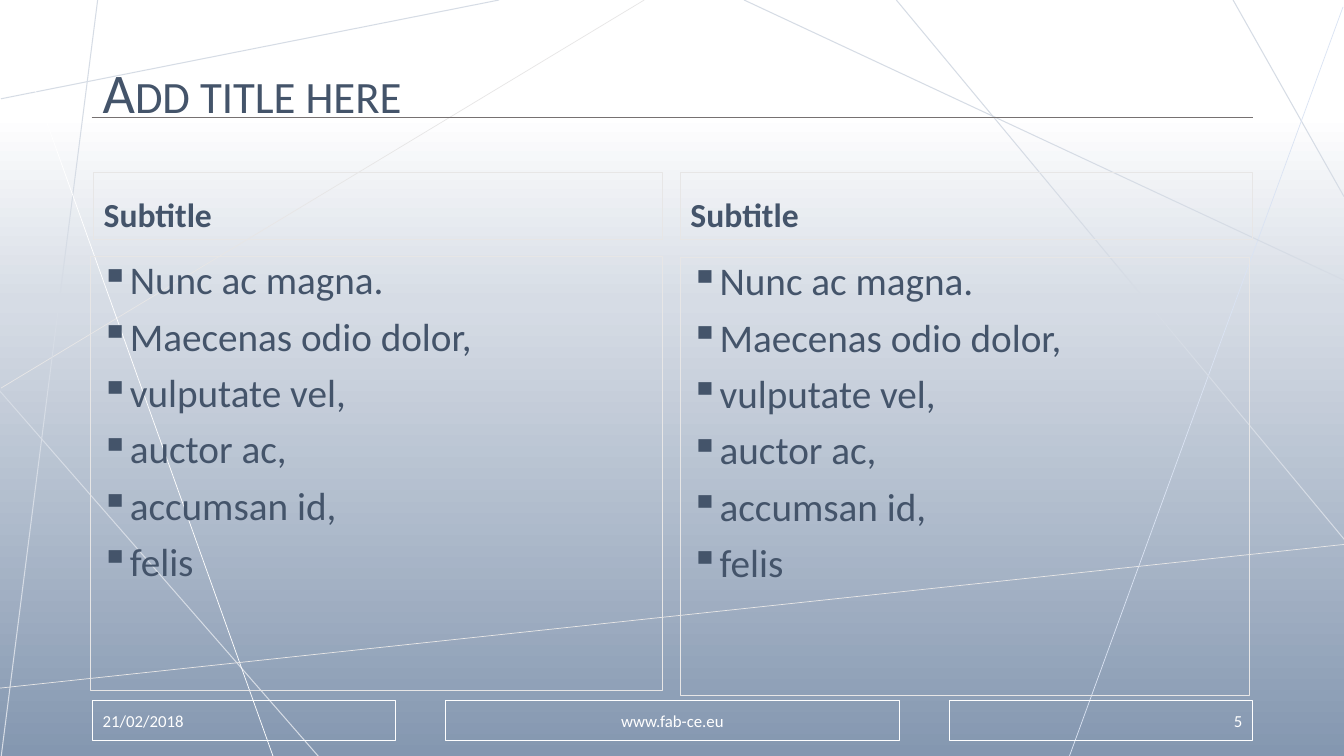
from lxml import etree
from pptx import Presentation
from pptx.dml.color import RGBColor
from pptx.enum.shapes import MSO_CONNECTOR
from pptx.enum.text import MSO_ANCHOR as Anchor, PP_ALIGN as Align
from pptx.oxml.ns import qn
from pptx.util import Inches, Pt

WIDTH, HEIGHT = 13.33, 7.5
FONT = "Calibri"
COLOURS = {"ink": "44546A", "white": "FFFFFF", "mist": "D6DCE5", "steel": "8497B0",
           "pale": "E7E6E6", "ice": "DAE3F3", "rule": "767171"}
BACKGROUND = [(15, "white"), (40, "mist"), (100, "steel")]

# start, end, colour, width in points
LINES = [
    ((0.01, 0.98), (4.95, 0), "mist", 0.75),
    ((13.33, 1.95), (12.23, 0), "mist", 0.75),
    ((0.01, 3.85), (6.39, 0), "pale", 0.5),
    ((3.19, 7.54), (-0.01, 3.87), "mist", 0.75),
    ((13.32, 0.07), (10.6, 7.52), "ice", 0.5),
    ((8.89, 0), (13.34, 5.36), "mist", 0.75),
    ((7.38, 0), (13.33, 2.78), "mist", 0.75),
    ((0.01, 7.52), (0.98, -0.09), "mist", 0.75),
    ((2.75, 7.62), (0.02, -0.03), "white", 0.5),
    ((-1.34, 6.97), (13.34, 5.4), "pale", 0.5),
    ((0.91, 1.17), (12.43, 1.17), "rule", 0.75),
]

TITLE = "Add title here"
SUBTITLE = "Subtitle"
ITEMS = ["Nunc ac magna.", "Maecenas odio dolor,", "vulputate vel,",
         "auctor ac,", "accumsan id,", "felis"]
# subtitle box, list box
COLUMNS = [((0.93, 1.71, 5.64, 0.67), (0.9, 2.54, 5.67, 4.31)),
           ((6.75, 1.71, 5.67, 0.67), (6.75, 2.55, 5.64, 4.35))]

MARGIN, FOOTER_TOP, FOOTER_HEIGHT, FOOTER_GAP = 0.92, 6.95, 0.4, 0.5
FOOTER = [("21/02/2018", 3, Align.LEFT), ("www.fab-ce.eu", 4.5, Align.CENTER),
          ("5", 3, Align.RIGHT)]


def colour(name):
    return RGBColor.from_string(COLOURS[name])


def paint_background(page):
    fill = page.background.fill
    fill.gradient()
    fill.gradient_angle = 270
    stops = next(page.element.iter(qn("a:gsLst")))
    for stop in list(stops):
        stops.remove(stop)
    for percent, name in BACKGROUND:
        stop = etree.SubElement(stops, qn("a:gs"), pos=str(percent * 1000))
        etree.SubElement(stop, qn("a:srgbClr"), val=COLOURS[name])


def add_line(page, start, end, name, width):
    ends = [Inches(value) for value in (*start, *end)]
    line = page.shapes.add_connector(MSO_CONNECTOR.STRAIGHT, *ends)
    line.line.color.rgb = colour(name)
    line.line.width = Pt(width)
    etree.SubElement(line.element.spPr, qn("a:effectLst"))


def add_bullet(para):
    properties = para._p.get_or_add_pPr()
    properties.set("marL", str(Inches(0.25)))
    properties.set("indent", str(-Inches(0.25)))
    etree.SubElement(properties, qn("a:buChar"), char="▪")


def add_box(page, place, lines, size, ink="ink", border=None, anchor=Anchor.TOP,
            align=Align.LEFT, spacing=0.9, bold=False, bullets=False):
    box = page.shapes.add_textbox(*[Inches(value) for value in place])
    if border:
        box.line.color.rgb = colour(border)
        box.line.width = Pt(0.75)
    frame = box.text_frame
    frame.word_wrap = True
    frame.vertical_anchor = anchor
    frame.text = "\n".join(lines)
    for index, para in enumerate(frame.paragraphs):
        if bullets:
            add_bullet(para)
        para.alignment = align
        para.line_spacing = spacing
        if index:
            para.space_before = Pt(10)
        for span in para.runs:
            span.font.name = FONT
            span.font.size = Pt(size)
            span.font.bold = bold
            span.font.color.rgb = colour(ink)
    return box


def main():
    deck = Presentation()
    deck.slide_width, deck.slide_height = Inches(WIDTH), Inches(HEIGHT)
    page = deck.slides.add_slide(deck.slide_layouts[6])
    paint_background(page)
    for line in LINES:
        add_line(page, *line)

    title = add_box(page, (MARGIN, 0.38, 11.5, 1.14), [TITLE], 40, anchor=Anchor.MIDDLE)
    title.text_frame.paragraphs[0].runs[0].font._element.set("cap", "small")

    for subtitle_place, list_place in COLUMNS:
        add_box(page, subtitle_place, [SUBTITLE], 24, border="pale",
                anchor=Anchor.BOTTOM, bold=True)
        add_box(page, list_place, ITEMS, 28, border="pale", bullets=True)

    left = MARGIN
    for words, width, align in FOOTER:
        add_box(page, (left, FOOTER_TOP, width, FOOTER_HEIGHT), [words], 12, ink="white",
                border="white", anchor=Anchor.MIDDLE, align=align, spacing=1.0)
        left += width + FOOTER_GAP
    deck.save("out.pptx")


if __name__ == "__main__":
    main()
